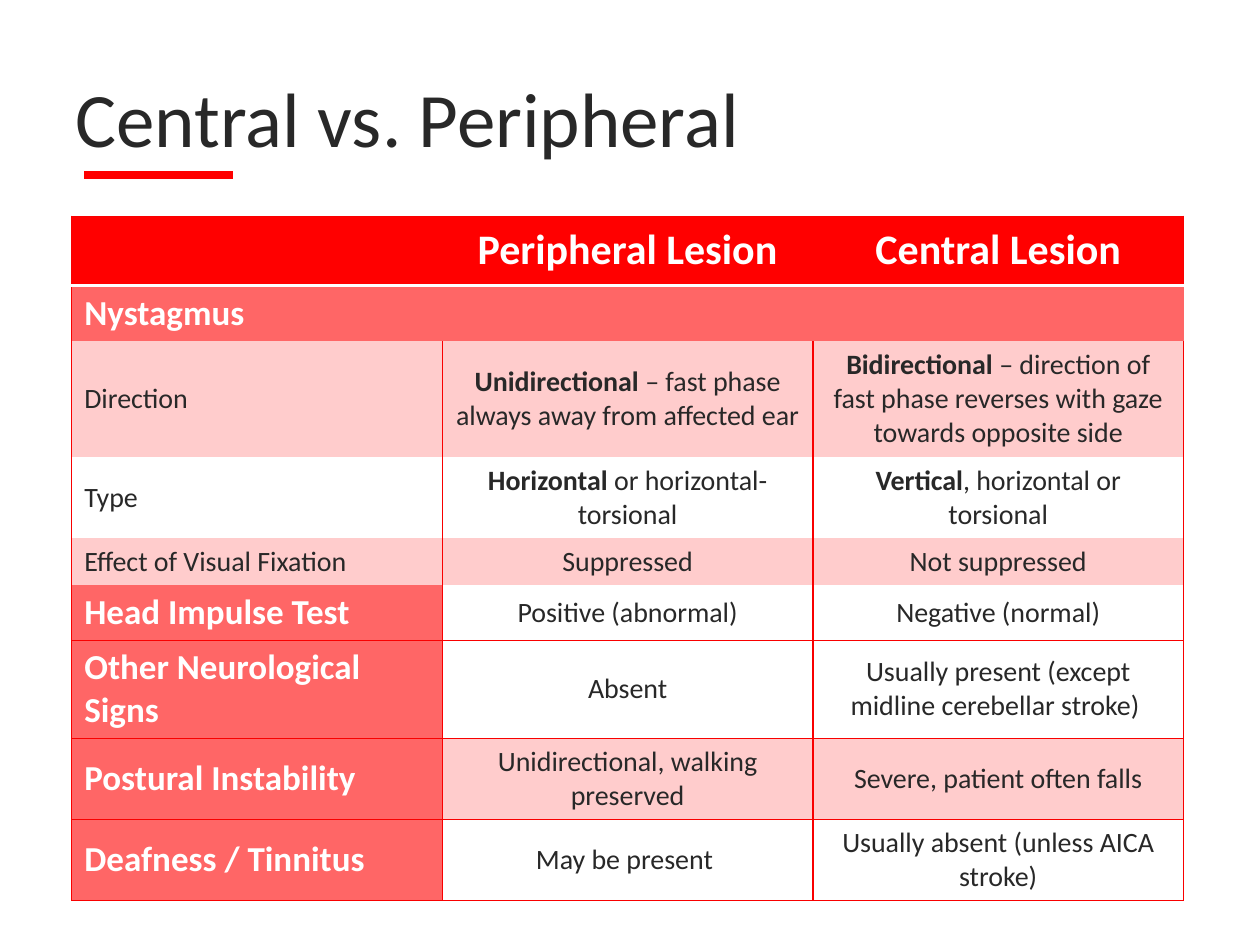
from pptx import Presentation
from pptx.dml.color import RGBColor
from pptx.enum.shapes import MSO_CONNECTOR
from pptx.enum.text import MSO_ANCHOR as ANCHOR, PP_ALIGN as ALIGN
from pptx.util import Pt
from lxml.etree import SubElement
from pptx.oxml.ns import qn

RED = RGBColor(0xFF, 0x00, 0x00)
RULE = RGBColor(0xF9, 0x00, 0x00)
CORAL = RGBColor(0xFF, 0x66, 0x66)
PINK = RGBColor(0xFF, 0xCC, 0xCC)
WHITE = RGBColor(0xFF, 0xFF, 0xFF)
INK = RGBColor(0x28, 0x28, 0x28)
FONT = "Calibri"
THIN, THICK = (RULE, 0.75), (WHITE, 2)

# Each row: height, kind, value fill, and one (bold, plain) pair per cell.
ROWS = [
    (39.4, "header", RED, [("", ""), ("Peripheral Lesion", ""), ("Central Lesion", "")]),
    (32, "band", CORAL, [("Nystagmus", ""), ("", ""), ("", "")]),
    (66.3, "detail", PINK, [
        ("", "Direction"),
        ("Unidirectional ", "– fast phase always away from affected ear"),
        ("Bidirectional ", "– direction of fast phase reverses with gaze towards opposite side")]),
    (46.3, "detail", WHITE, [
        ("", "Type"),
        ("Horizontal ", "or horizontal-torsional"),
        ("Vertical", ", horizontal or torsional")]),
    (26.8, "detail", PINK, [
        ("", "Effect of Visual Fixation"), ("", "Suppressed"), ("", "Not suppressed")]),
    (31.6, "test", WHITE, [
        ("Head Impulse Test", ""), ("", "Positive (abnormal)"), ("", "Negative (normal)")]),
    (56, "test", WHITE, [
        ("Other Neurological Signs", ""), ("", "Absent"),
        ("", "Usually present (except midline cerebellar stroke) ")]),
    (46.3, "test", PINK, [
        ("Postural Instability", ""), ("", "Unidirectional, walking preserved"),
        ("", "Severe, patient often falls")]),
    (46.3, "test", WHITE, [
        ("Deafness / Tinnitus", ""), ("", "May be present "),
        ("", "Usually absent (unless AICA stroke)")]),
]


def add_run(p, text, size, color, bold=False):
    """Append one styled run to a paragraph."""
    r = p.add_run()
    r.text = text
    r.font.name, r.font.size, r.font.bold = FONT, Pt(size), bold
    r.font.color.rgb = color


def set_borders(cell, borders):
    """Draw the listed sides of a cell and clear the others."""
    tc_pr = cell._tc.get_or_add_tcPr()
    for side in "LRTB":
        ln = SubElement(tc_pr, qn(f"a:ln{side}"))
        if side in borders:
            color, width = borders[side]
            ln.set("w", str(Pt(width)))
            fill = SubElement(ln, qn("a:solidFill"))
            SubElement(fill, qn("a:srgbClr")).set("val", str(color))
        else:
            ln.set("w", "0")
            SubElement(ln, qn("a:noFill"))


def row_borders(i, col):
    """Return the borders of the cell at a row and column."""
    kind = ROWS[i][1]
    borders = {}
    if kind in ("detail", "test") or col == 0:
        borders["L"] = THIN
    if kind in ("detail", "test") or col == 2:
        borders["R"] = THIN
    if kind == "header":
        borders.update(T=THIN, B=THICK)
    elif kind == "band":
        borders["T"] = THICK
    elif kind == "test":
        borders["B"] = THIN
        if ROWS[i - 1][1] == "test":
            borders["T"] = THIN
    return borders


def add_title(s, x, y, w, h):
    """Place the heading and the red rule under it."""
    tf = s.shapes.add_textbox(Pt(x), Pt(y), Pt(w), Pt(h)).text_frame
    tf.word_wrap = True
    tf.vertical_anchor = ANCHOR.MIDDLE
    add_run(tf.paragraphs[0], "Central vs. Peripheral", 44, INK)
    left, top = x + 12.2, y + 78.5
    line = s.shapes.add_connector(
        MSO_CONNECTOR.STRAIGHT, Pt(left), Pt(top), Pt(left + 85), Pt(top))
    line.line.color.rgb, line.line.width = RED, Pt(4.5)
    SubElement(line._element.spPr, qn("a:effectLst"))


def add_comparison(s, x, y, w):
    """Place the comparison table."""
    height = sum(row[0] for row in ROWS)
    table = s.shapes.add_table(len(ROWS), 3, Pt(x), Pt(y), Pt(w), Pt(height)).table
    table.first_row = table.horz_banding = False
    for column in table.columns:
        column.width = Pt(w / 3)
    for i, (row_height, kind, fill, texts) in enumerate(ROWS):
        table.rows[i].height = Pt(row_height)
        for col, (bold, plain) in enumerate(texts):
            cell = table.cell(i, col)
            set_borders(cell, row_borders(i, col))
            label = kind == "band" or (kind == "test" and col == 0)
            cell.fill.solid()
            cell.fill.fore_color.rgb = CORAL if label else fill
            cell.vertical_anchor = ANCHOR.MIDDLE
            size = 24 if kind == "header" else 20 if label else 16
            color = WHITE if kind == "header" or label else INK
            p = cell.text_frame.paragraphs[0]
            p.alignment = ALIGN.CENTER if col else ALIGN.LEFT
            for text, is_bold in ((bold, True), (plain, False)):
                if text:
                    add_run(p, text, size, color, is_bold)
        if kind == "band":
            table.cell(i, 0).merge(table.cell(i, 2))


def main():
    """Build and save the slide."""
    prs = Presentation()
    prs.slide_width, prs.slide_height = Pt(720), Pt(540)
    s = prs.slides.add_slide(prs.slide_layouts[6])
    add_title(s, 36, 21.6, 648, 90)
    add_comparison(s, 41, 123.6, 635.4)
    prs.save("out.pptx")


if __name__ == "__main__":
    main()
